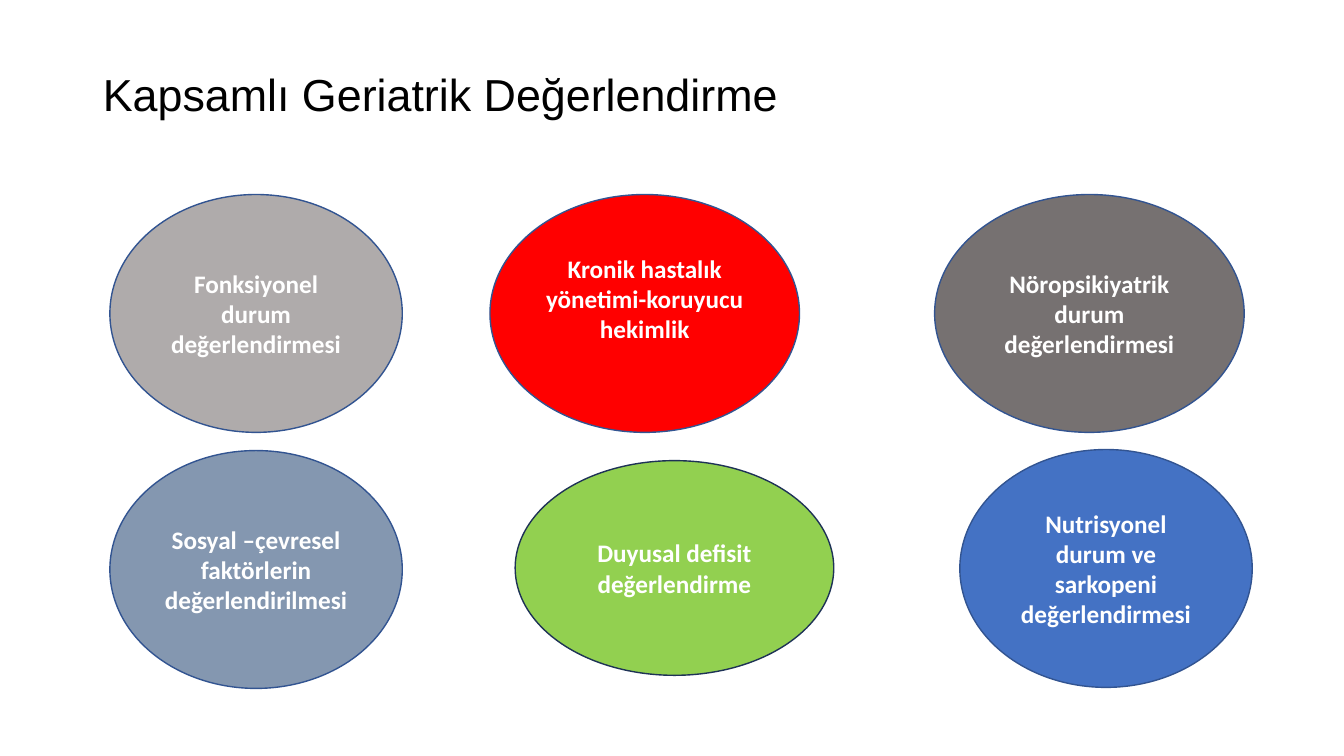
import pptx
import pptx.dml.color
import pptx.enum.shapes
import pptx.enum.text
import pptx.util

Inches = pptx.util.Inches
Pt = pptx.util.Pt
Color = pptx.dml.color.RGBColor.from_string
Shape = pptx.enum.shapes.MSO_SHAPE
Align = pptx.enum.text.PP_ALIGN
Anchor = pptx.enum.text.MSO_ANCHOR

THEME = {
    "title_font": "Arial", "title_size": Pt(32), "title_color": Color("000000"),
    "label_font": "Calibri", "label_size": Pt(18), "label_color": Color("FFFFFF"),
    "line": Color("325491"), "dark_line": Color("1E3256"),
    "silver": Color("AFABAB"), "red": Color("FF0000"), "gray": Color("767171"),
    "steel": Color("8497B0"), "green": Color("92D050"), "blue": Color("4472C4"),
}


def style_text(para, role, align, bold=False):
    para.alignment = align
    para.font.name = THEME[role + "_font"]
    para.font.size = THEME[role + "_size"]
    para.font.color.rgb = THEME[role + "_color"]
    para.font.bold = bold


deck = pptx.Presentation()
deck.slide_width, deck.slide_height = Inches(13.33), Inches(7.5)
page = deck.slides.add_slide(deck.slide_layouts[5])

title = page.shapes.title
title.left, title.top, title.width, title.height = map(Inches, (0.92, 0.4, 11.5, 1.12))
title.text_frame.text = "Kapsamlı Geriatrik Değerlendirme"
title.text_frame.vertical_anchor = Anchor.MIDDLE
title.text_frame.paragraphs[0].line_spacing = 0.9
style_text(title.text_frame.paragraphs[0], "title", Align.LEFT)

circle = Shape.FLOWCHART_CONNECTOR
topics = [
    ("Sosyal –çevresel faktörlerin değerlendirilmesi", circle, (1.09, 4.47, 2.9, 2.36), "steel", "line", 0.05),
    ("Nöropsikiyatrik durum değerlendirmesi", circle, (9.27, 1.93, 3.07, 2.36), "gray", "line", 0.05),
    ("Nutrisyonel durum ve sarkopeni değerlendirmesi", circle, (9.52, 4.46, 2.9, 2.36), "blue", "line", 0.05),
    ("Kronik hastalık yönetimi-koruyucu hekimlik", circle, (4.86, 1.93, 3.07, 2.36), "red", "line", 0.35),
    ("Fonksiyonel durum değerlendirmesi", circle, (1.09, 1.93, 2.9, 2.36), "silver", "line", 0.05),
    ("Duyusal defisit\ndeğerlendirme", Shape.OVAL, (5.11, 4.57, 3.16, 2.13), "green", "dark_line", 0.05),
]
for label, outline, place, fill, line, bottom_margin in topics:
    oval = page.shapes.add_shape(outline, *map(Inches, place))
    oval.shadow.inherit = False
    oval.fill.solid()
    oval.fill.fore_color.rgb = THEME[fill]
    oval.line.color.rgb = THEME[line]
    oval.line.width = Pt(1)
    frame = oval.text_frame
    frame.word_wrap = True
    frame.vertical_anchor = Anchor.MIDDLE
    frame.margin_bottom = Inches(bottom_margin)
    frame.text = label
    for para in frame.paragraphs:
        style_text(para, "label", Align.CENTER, bold=True)

deck.save("out.pptx")
